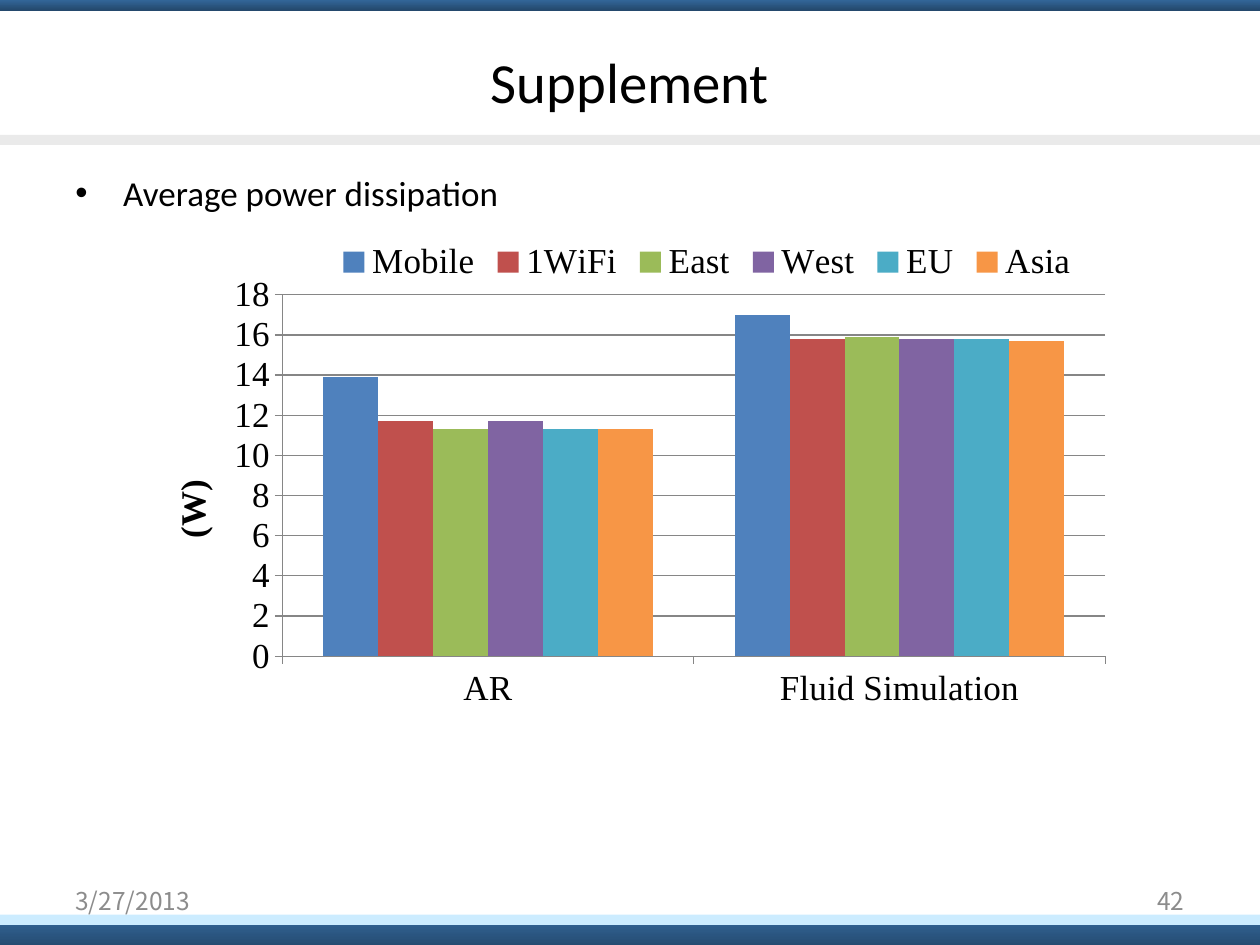
from lxml import etree
from pptx import Presentation
from pptx.chart.data import CategoryChartData
from pptx.dml.color import RGBColor
from pptx.enum.chart import XL_CHART_TYPE, XL_LEGEND_POSITION, XL_TICK_MARK
from pptx.enum.shapes import MSO_SHAPE
from pptx.enum.text import MSO_ANCHOR, PP_ALIGN
from pptx.oxml.ns import qn
from pptx.util import Inches, Pt

COLUMN = XL_CHART_TYPE.COLUMN_CLUSTERED
LEGEND_TOP = XL_LEGEND_POSITION.TOP
TICK_OUTSIDE = XL_TICK_MARK.OUTSIDE
RECTANGLE = MSO_SHAPE.RECTANGLE
MIDDLE, TOP = MSO_ANCHOR.MIDDLE, MSO_ANCHOR.TOP
LEFT, CENTER, RIGHT = PP_ALIGN.LEFT, PP_ALIGN.CENTER, PP_ALIGN.RIGHT

WIDTH, HEIGHT = 10, 7.5
MARGIN = 0.05 * WIDTH
CONTENT_WIDTH = WIDTH - 2 * MARGIN
FOOTER_WIDTH = 2.33
BAND = 0.08

COLORS = {
    "text": "000000",
    "footer": "8C8C8C",
    "navy": "336699",
    "dark navy": "24496D",
    "sky": "CCECFF",
    "rule": "EAEAEA",
    "axis": "868686",
}
BODY_FONT, FOOTER_FONT, CHART_FONT = "Calibri", "Noto Sans CJK KR", "Times New Roman"

CATEGORIES = ["AR", "Fluid Simulation"]
POWER = [
    ("Mobile", (13.9, 17), "4F81BD"),
    ("1WiFi", (11.7, 15.8), "C0504D"),
    ("East", (11.3, 15.9), "9BBB59"),
    ("West", (11.7, 15.8), "8064A2"),
    ("EU", (11.3, 15.8), "4BACC6"),
    ("Asia", (11.3, 15.7), "F79646"),
]


def rgb(name):
    return RGBColor.from_string(COLORS[name])


def style_font(font, name, size, color="text", bold=False):
    font.name, font.size, font.bold = name, Pt(size), bold
    font.color.rgb = rgb(color)


def add_band(slide, top, height, *colors):
    """Full-width band: one colour is solid, two run from top to bottom."""
    band = slide.shapes.add_shape(
        RECTANGLE, 0, Inches(top), Inches(WIDTH), Inches(height))
    band.shadow.inherit = False
    band.line.fill.background()
    if len(colors) == 1:
        band.fill.solid()
        band.fill.fore_color.rgb = rgb(colors[0])
        return
    band.fill.gradient()
    band.fill.gradient_angle = 270
    for stop, color in zip(band.fill.gradient_stops, colors):
        stop.color.rgb = rgb(color)


def add_text(slide, box, text, font, size, color="text", align=LEFT, anchor=MIDDLE):
    frame = slide.shapes.add_textbox(*map(Inches, box)).text_frame
    frame.word_wrap = True
    frame.vertical_anchor = anchor
    paragraph = frame.paragraphs[0]
    paragraph.alignment = align
    run = paragraph.add_run()
    run.text = text
    style_font(run.font, font, size, color)
    return paragraph


def add_bullet(paragraph, indent):
    properties = paragraph._p.get_or_add_pPr()
    properties.set("marL", str(Inches(indent)))
    properties.set("indent", str(-Inches(indent)))
    etree.SubElement(properties, qn("a:buFont"), typeface="Arial")
    etree.SubElement(properties, qn("a:buChar"), char="•")


def place(element, index, **shares):
    """Fix a chart part at shares of the chart's size."""
    for previous in element.findall(qn("c:layout")):
        element.remove(previous)
    layout = etree.Element(qn("c:layout"))
    element.insert(index, layout)
    manual = etree.SubElement(layout, qn("c:manualLayout"))
    if "w" in shares:
        etree.SubElement(manual, qn("c:layoutTarget"), val="inner")
    for side in "xy":
        etree.SubElement(manual, qn(f"c:{side}Mode"), val="edge")
    for side, share in shares.items():
        etree.SubElement(manual, qn(f"c:{side}"), val=str(share))


def style_axis(axis):
    axis.major_tick_mark = TICK_OUTSIDE
    style_font(axis.tick_labels.font, CHART_FONT, 20)
    axis.format.line.color.rgb = rgb("axis")
    axis.format.line.width = Pt(0.75)


def style_value_axis(axis):
    style_axis(axis)
    axis.minimum_scale, axis.maximum_scale, axis.major_unit = 0, 18, 2
    axis.tick_labels.number_format = "General"
    axis.tick_labels.number_format_is_linked = False
    axis.has_major_gridlines = True
    axis.major_gridlines.format.line.color.rgb = rgb("axis")
    axis.major_gridlines.format.line.width = Pt(0.75)
    run = axis.axis_title.text_frame.paragraphs[0].add_run()
    run.text = "(W)"
    style_font(run.font, CHART_FONT, 20, bold=True)
    title = axis.axis_title.element
    body = title.find(".//" + qn("a:bodyPr"))
    body.set("rot", "-5400000")
    body.set("vert", "horz")
    place(title, 1, x=0.03, y=0.5)


def add_power_chart(slide, box):
    data = CategoryChartData()
    data.categories = CATEGORIES
    for name, values, _ in POWER:
        data.add_series(name, values)
    chart = slide.shapes.add_chart(COLUMN, *map(Inches, box), data).chart
    style_font(chart.font, FOOTER_FONT, 10)
    chart.has_title = False
    plot = chart.plots[0]
    plot.gap_width = 150
    plot.vary_by_categories = False
    for series, (_, _, color) in zip(plot.series, POWER):
        series.format.fill.solid()
        series.format.fill.fore_color.rgb = RGBColor.from_string(color)
    style_axis(chart.category_axis)
    style_value_axis(chart.value_axis)
    chart.has_legend = True
    chart.legend.position = LEGEND_TOP
    chart.legend.include_in_layout = False
    style_font(chart.legend.font, CHART_FONT, 20)
    place(chart.element.find(".//" + qn("c:legend")), 1, x=0.2, y=0.02)
    place(chart.element.find(".//" + qn("c:plotArea")), 0,
          x=0.15, y=0.14, w=0.83, h=0.73)


def main():
    presentation = Presentation()
    presentation.slide_width = Inches(WIDTH)
    presentation.slide_height = Inches(HEIGHT)
    slide = presentation.slides.add_slide(presentation.slide_layouts[6])

    add_band(slide, 7.28, 0.25, "navy", "dark navy")
    add_band(slide, 7.26, BAND, "sky")
    add_band(slide, 1.07, BAND, "rule")
    add_band(slide, 0, BAND, "navy", "dark navy")

    add_text(slide, (MARGIN, 0.3, CONTENT_WIDTH, 0.69), "Supplement",
             BODY_FONT, 32.4, align=CENTER)
    point = add_text(slide, (MARGIN, 1.23, CONTENT_WIDTH, 5.51),
                     "Average power dissipation", BODY_FONT, 20, anchor=TOP)
    point.line_spacing = 1.25
    add_bullet(point, 0.38)

    for left, text, align in ((MARGIN, "3/27/2013", LEFT),
                              (WIDTH - MARGIN - FOOTER_WIDTH, "42", RIGHT)):
        add_text(slide, (left, 6.95, FOOTER_WIDTH, 0.4), text,
                 FOOTER_FONT, 14, "footer", align)
    add_power_chart(slide, (1.06, 1.79, 7.87, 3.93))
    presentation.save("out.pptx")


if __name__ == "__main__":
    main()
